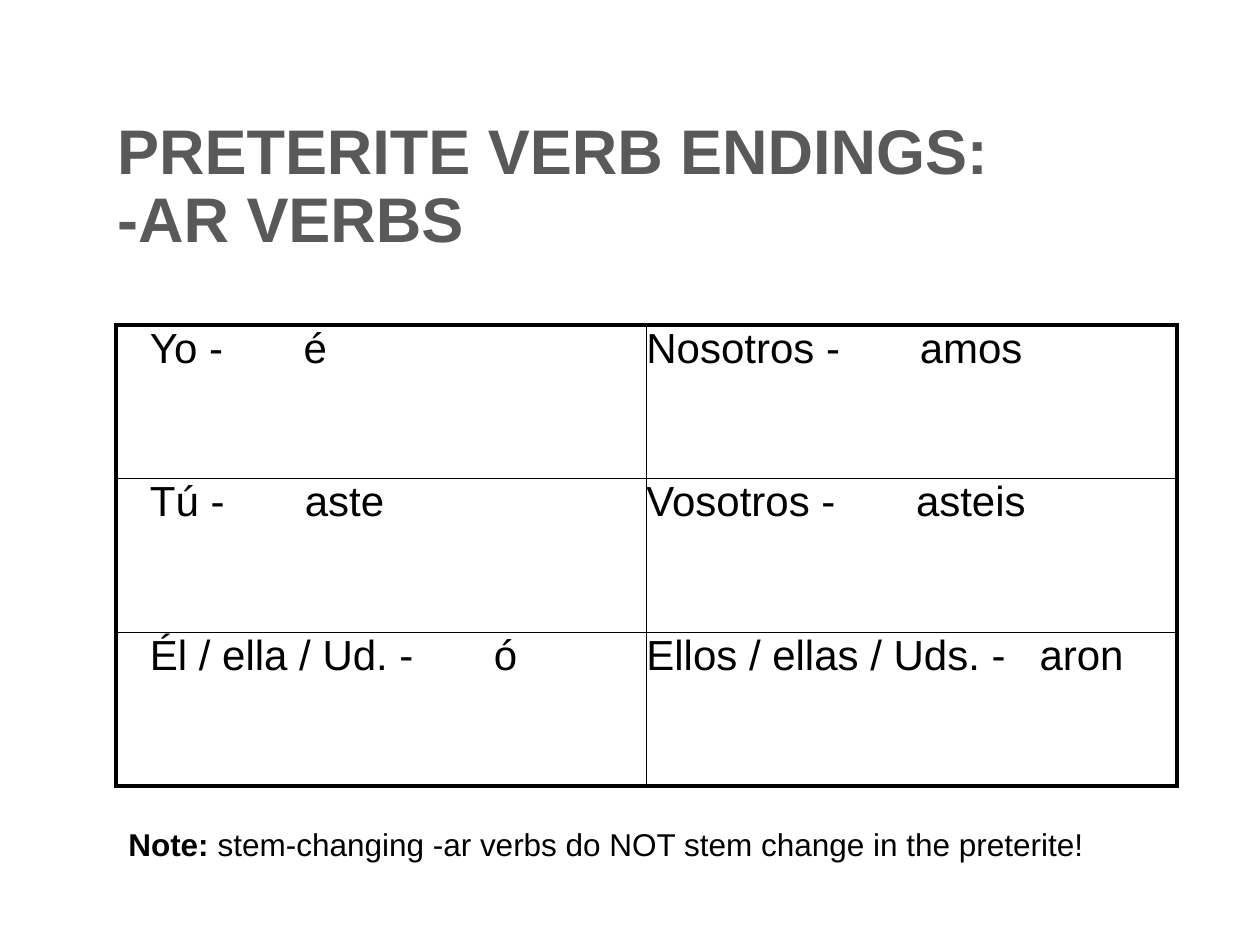
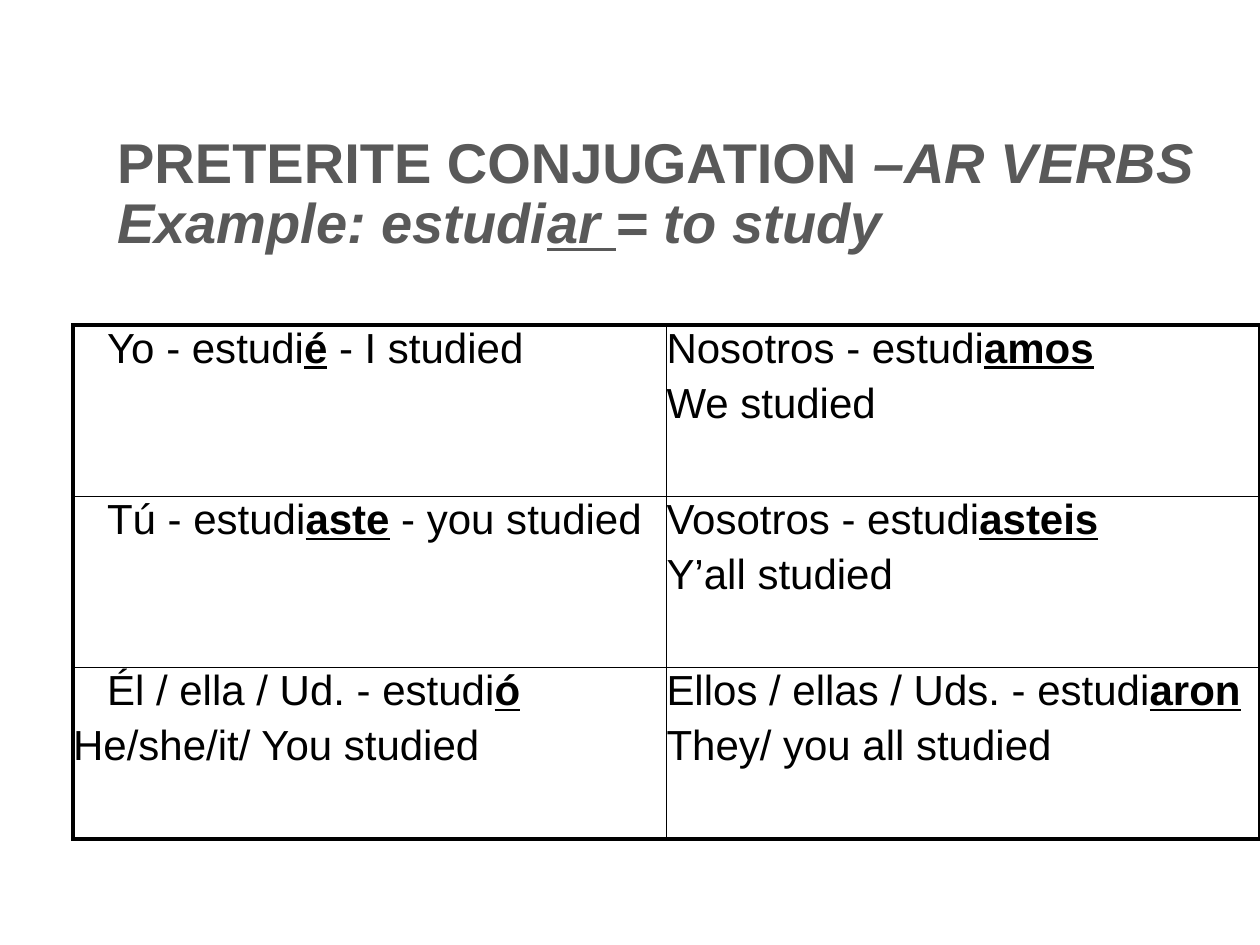
from dataclasses import dataclass

from lxml import etree
from pptx import Presentation
from pptx import util as u
from pptx.dml.color import RGBColor
from pptx.enum import text
from pptx.oxml import ns


@dataclass(frozen=True)
class Theme:
    font: str = "Arial"
    heading: str = "595959"
    ink: str = "000000"
    cell_size: int = 24
    note_size: int = 18
    outer_line: float = 2.25
    inner_line: float = 1
    pronoun_indent: float = 0.27
    translation_gap: float = 4.8


THEME = Theme()
TITLE_ONLY = 5
TITLE_LEFT, TITLE_TOP, TITLE_HEIGHT = 0.83, 0.83, 1.25
TABLE_TOP = 2.58


def ending(pronoun, suffix, tab):
    """A cell whose suffix stands at a tab, in inches from the start of the pronoun."""
    return {"lines": [[(f"{pronoun} -\t{suffix}", "")]], "tab": tab}


def form(pronoun, suffix, same_line="", translation=""):
    """A cell with a form of estudiar, its suffix stressed."""
    lines = [[(f"{pronoun} - estudi", ""), (suffix, "bu")]]
    if same_line:
        lines[0].append((f" - {same_line}", ""))
    if translation:
        lines.append([(translation, "")])
    return {"lines": lines}


# Run styles: b bold, i italic, u underlined
SLIDES = [
    {
        "title": [[("PRETERITE VERB ENDINGS: ", "b")], [("-AR VERBS", "b")]],
        "title_size": 36,
        "title_width": 8.67,
        "table_left": 0.92,
        "column": 4.21,
        "row": 1.22,
        "cells": [
            [ending("Yo", "é", 1.22), ending("Nosotros", "amos", 2.17)],
            [ending("Tú", "aste", 1.23), ending("Vosotros", "asteis", 2.14)],
            [ending("Él / ella / Ud.", "ó", 2.73), ending("Ellos / ellas / Uds.", "aron", 3.12)],
        ],
        "note": [("Note:", "b"),
                 (" stem-changing -ar verbs do NOT stem change in the preterite!", "")],
    },
    {
        "title": [[("PRETERITE CONJUGATION ", "b"), ("–AR VERBS", "bi")],
                  [("Example: estudi", "bi"), ("ar ", "biu"), ("= to study", "bi")]],
        "title_size": 32,
        "title_width": 9,
        "table_left": 0.58,
        "column": 4.71,
        "row": 1.36,
        "cells": [
            [form("Yo", "é", same_line="I studied"),
             form("Nosotros", "amos", translation="We studied")],
            [form("Tú", "aste", same_line="you studied"),
             form("Vosotros", "asteis", translation="Y’all studied")],
            [form("Él / ella / Ud.", "ó", translation="He/she/it/ You studied"),
             form("Ellos / ellas / Uds.", "aron", translation="They/ you all studied")],
        ],
    },
]


def add_runs(paragraph, runs, size, color):
    for words, style in runs:
        run = paragraph.add_run()
        run.text = words
        font = run.font
        font.name, font.size = THEME.font, u.Pt(size)
        font.color.rgb = RGBColor.from_string(color)
        font.bold, font.italic, font.underline = (flag in style for flag in "biu")


def add_title(slide, content):
    title = slide.shapes.title
    title.left, title.top = u.Inches(TITLE_LEFT), u.Inches(TITLE_TOP)
    title.width, title.height = u.Inches(content["title_width"]), u.Inches(TITLE_HEIGHT)
    outline = etree.SubElement(title._element.spPr, ns.qn("a:prstGeom"), prst="roundRect")
    etree.SubElement(outline, ns.qn("a:avLst"))
    frame = title.text_frame
    frame.auto_size = text.MSO_AUTO_SIZE.NONE
    frame.vertical_anchor = text.MSO_ANCHOR.BOTTOM
    paragraph = frame.paragraphs[0]
    paragraph.alignment = text.PP_ALIGN.LEFT
    paragraph.line_spacing = 0.9
    for number, line in enumerate(content["title"]):
        if number:
            paragraph.add_line_break()
        add_runs(paragraph, line, content["title_size"], THEME.heading)


def set_border(cell, side, width):
    line = etree.SubElement(cell._tc.get_or_add_tcPr(), ns.qn(f"a:ln{side}"),
                            w=str(u.Pt(width)))
    fill = etree.SubElement(line, ns.qn("a:solidFill"))
    etree.SubElement(fill, ns.qn("a:srgbClr"), val=THEME.ink)


def fill_cell(cell, content, indented):
    """Indent by the cell's margin where tabs are used, else by the first line."""
    cell.margin_left = cell.margin_right = cell.margin_top = cell.margin_bottom = 0
    tab = content.get("tab")
    indent = u.Inches(THEME.pronoun_indent if indented else 0)
    if tab:
        cell.margin_left = indent
    frame = cell.text_frame
    for number, line in enumerate(content["lines"]):
        paragraph = frame.add_paragraph() if number else frame.paragraphs[0]
        properties = paragraph._p.get_or_add_pPr()
        if number:
            paragraph.space_before = u.Pt(THEME.translation_gap)
        elif tab:
            tabs = etree.SubElement(properties, ns.qn("a:tabLst"))
            etree.SubElement(tabs, ns.qn("a:tab"), pos=str(u.Inches(tab)), algn="l")
        else:
            properties.set("marL", "0")
            properties.set("indent", str(indent))
        add_runs(paragraph, line, THEME.cell_size, THEME.ink)


def add_verb_table(slide, content):
    cells = content["cells"]
    rows, columns = len(cells), len(cells[0])
    table = slide.shapes.add_table(
        rows, columns, u.Inches(content["table_left"]), u.Inches(TABLE_TOP),
        u.Inches(columns * content["column"]), u.Inches(rows * content["row"])).table
    table.first_row = table.horz_banding = False
    for r, row in enumerate(cells):
        for c, cell_content in enumerate(row):
            cell = table.cell(r, c)
            fill_cell(cell, cell_content, indented=c == 0)
            on_edge = {"L": c == 0, "R": c == columns - 1, "T": r == 0, "B": r == rows - 1}
            for side, outer in on_edge.items():
                set_border(cell, side, THEME.outer_line if outer else THEME.inner_line)
            cell.fill.background()


def add_note(slide, note, left):
    frame = slide.shapes.add_textbox(
        u.Inches(left), u.Inches(6.5), u.Inches(7.79), u.Inches(0.4)).text_frame
    frame.word_wrap = True
    add_runs(frame.paragraphs[0], note, THEME.note_size, THEME.ink)


def main():
    deck = Presentation()
    deck.slide_width, deck.slide_height = u.Inches(10), u.Inches(7.5)
    for content in SLIDES:
        slide = deck.slides.add_slide(deck.slide_layouts[TITLE_ONLY])
        add_title(slide, content)
        add_verb_table(slide, content)
        if "note" in content:
            add_note(slide, content["note"], content["table_left"])
    deck.save("out.pptx")


if __name__ == "__main__":
    main()
